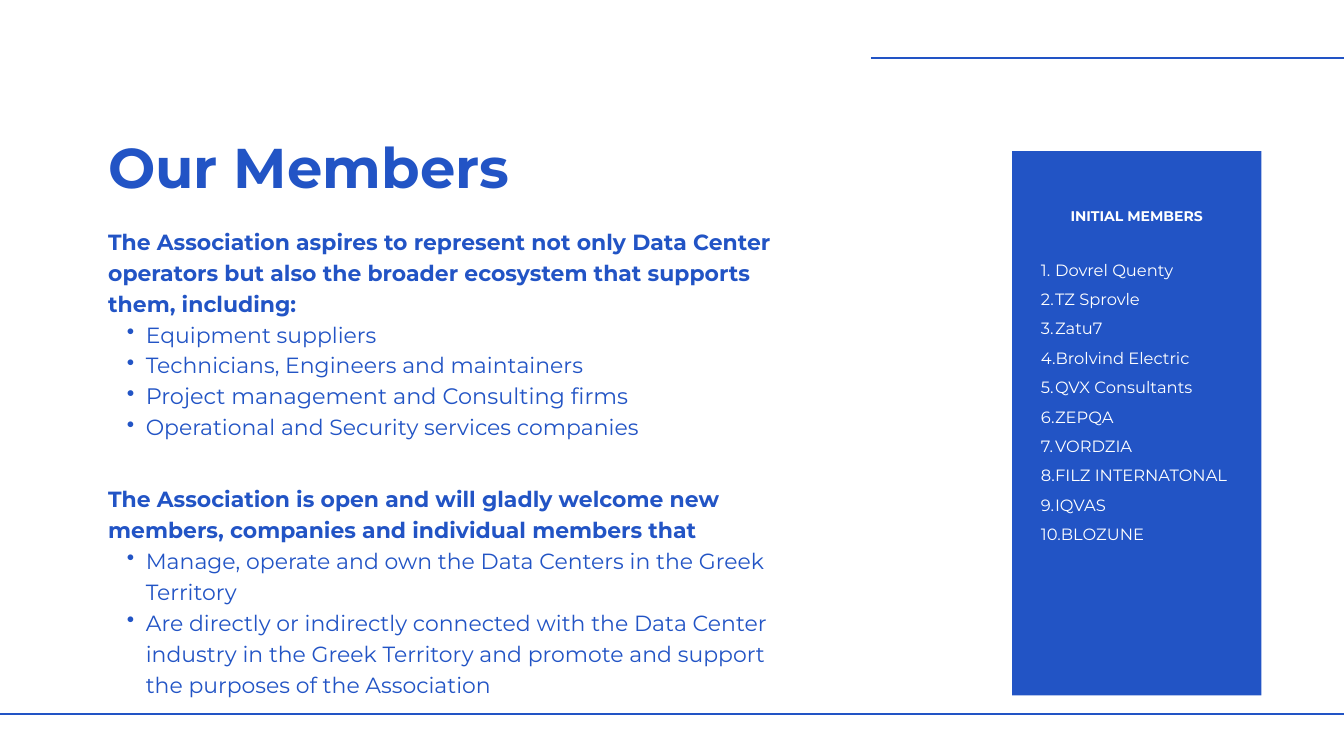
from lxml import etree
from pptx import Presentation
from pptx import util as u
from pptx.dml.color import RGBColor
from pptx.enum import shapes, text
from pptx.oxml.ns import qn

Pt = u.Pt
BLUE, WHITE = "2254C5", "FFFFFF"
FONT = "Montserrat"
SLIDE_W, SLIDE_H = 1440, 810
LEFT = 115.9

ASPIRATION = ("The Association aspires to represent not only Data Center operators "
              "but also the broader ecosystem that supports them, including:")
SUPPORTERS = [
    ("Equipment suppliers", 23.5),
    ("Technicians, Engineers and maintainers", 23.5),
    ("Project management and Consulting firms", 24),
    ("Operational and Security services companies", 23.5),
]
WELCOME = ("The Association is open and will gladly welcome new members, "
           "companies and individual members that")
CRITERIA = [
    ("Manage, operate and own the Data Centers in the Greek Territory", 23.5),
    ("Are directly or indirectly connected with the Data Center industry in the "
     "Greek Territory and promote and support the purposes of the Association", 23.5),
]
MEMBERS = ["Dovrel Quenty", "TZ Sprovle", "Zatu7", "Brolvind Electric",
           "QVX Consultants", "ZEPQA", "VORDZIA", "FILZ INTERNATONAL",
           "IQVAS", "BLOZUNE"]


def rgb(value):
    return RGBColor.from_string(value)


def place(sp, x, y, w, h):
    sp.left, sp.top, sp.width, sp.height = Pt(x), Pt(y), Pt(w), Pt(h)


def prepare_frame(sp):
    tf = sp.text_frame
    tf.margin_left = tf.margin_right = tf.margin_top = tf.margin_bottom = 0
    tf.word_wrap = True
    tf.auto_size = text.MSO_AUTO_SIZE.NONE
    tf.vertical_anchor = text.MSO_ANCHOR.TOP
    return tf


def add_frame(slide, x, y, w, h):
    return prepare_frame(slide.shapes.add_textbox(Pt(x), Pt(y), Pt(w), Pt(h)))


def write(tf, content, size, spacing, color=BLUE, bold=False,
          align=text.PP_ALIGN.LEFT, bullet=None, indent=0):
    """Add a paragraph; bullet is a (tag, attribute, value) triple."""
    p = tf.paragraphs[0] if not tf.paragraphs[0].runs else tf.add_paragraph()
    if bullet:
        tag, attribute, value = bullet
        p.level = 1
        pPr = p._p.get_or_add_pPr()
        pPr.set("marL", str(Pt(indent)))
        pPr.set("indent", str(-Pt(indent / 2)))
        etree.SubElement(pPr, qn(tag)).set(attribute, value)
    p.alignment = align
    p.line_spacing = Pt(spacing)
    r = p.add_run()
    r.text = content
    r.font.name, r.font.size, r.font.bold = FONT, Pt(size), bold
    r.font.color.rgb = rgb(color)


def add_title(slide, x, y, w, h):
    sp = slide.shapes.title
    place(sp, x, y, w, h)
    write(prepare_frame(sp), "Our Members", 60, 83.9, bold=True)


def add_statement(slide, x, y, w, h, lead, items):
    tf = add_frame(slide, x, y, w, h)
    write(tf, lead, 23.5, 33.1, bold=True)
    for item, size in items:
        write(tf, item, size, 33.1, bullet=("a:buChar", "char", "•"), indent=40.3)


def add_member_panel(slide, x, y, w, h):
    # Background
    sp = slide.shapes.add_shape(shapes.MSO_SHAPE.RECTANGLE, Pt(x), Pt(y), Pt(w), Pt(h))
    sp.shadow.inherit = False
    sp.fill.solid()
    sp.fill.fore_color.rgb = rgb(BLUE)
    sp.line.fill.background()
    # Heading and numbered list
    inset = 15.9
    inner = w - 2 * inset
    tf = add_frame(slide, x + inset, y + 56.9, inner, 21)
    write(tf, "INITIAL MEMBERS", 15, 21.1, WHITE, bold=True, align=text.PP_ALIGN.CENTER)
    tf = add_frame(slide, x + inset, y + 105.8, inner, 332)
    for member in MEMBERS:
        write(tf, member, 17.5, 31.5, WHITE,
              bullet=("a:buAutoNum", "type", "arabicPeriod"), indent=30.2)


def add_rule(slide, x, y, w):
    line = slide.shapes.add_connector(shapes.MSO_CONNECTOR.STRAIGHT,
                                      Pt(x), Pt(y), Pt(x + w), Pt(y))
    line.line.color.rgb = rgb(BLUE)
    line.line.width = Pt(2.25)
    etree.SubElement(line._element.spPr, qn("a:effectLst"))


def main():
    prs = Presentation()
    prs.slide_width, prs.slide_height = Pt(SLIDE_W), Pt(SLIDE_H)
    slide = prs.slides.add_slide(prs.slide_layouts[5])
    slide.background.fill.solid()
    slide.background.fill.fore_color.rgb = rgb(WHITE)

    # Title and statements
    add_title(slide, LEFT, 130.3, 648.7, 78.5)
    add_statement(slide, LEFT, 239.8, 756, 297.4, ASPIRATION, SUPPORTERS)
    add_statement(slide, LEFT, 515.5, 731.5, 263.5, WELCOME, CRITERIA)

    # Member list
    add_member_panel(slide, 1084.3, 162, 267.1, 583.2)

    # Rules at the bottom and top
    add_rule(slide, 0, 765.4, SLIDE_W)
    add_rule(slide, 933.1, 62.6, SLIDE_W - 933.1)

    prs.save("out.pptx")


if __name__ == "__main__":
    main()
